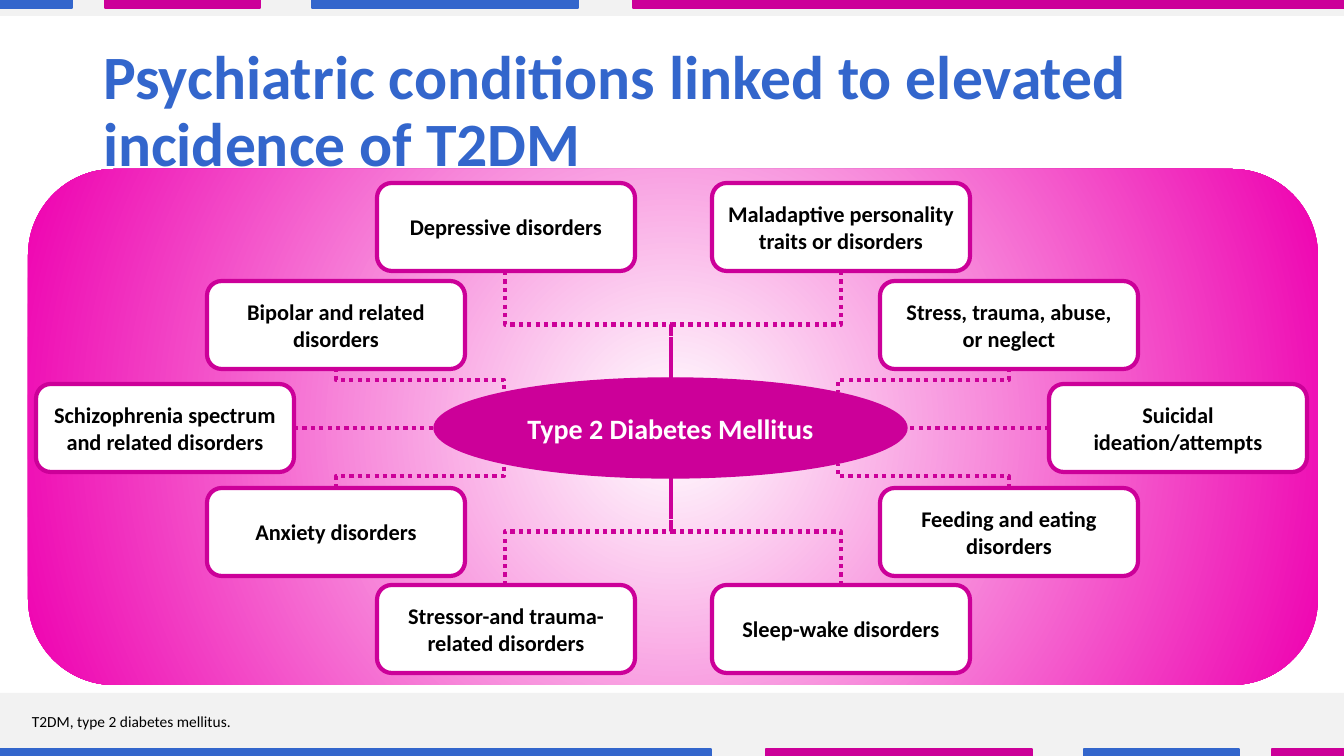
from lxml.etree import SubElement
from pptx import Presentation
from pptx.dml.color import RGBColor
from pptx.enum.dml import MSO_LINE_DASH_STYLE as DASH
from pptx.enum.shapes import MSO_CONNECTOR as CONNECTOR, MSO_SHAPE as SHAPE
from pptx.enum.text import MSO_ANCHOR as ANCHOR, MSO_AUTO_SIZE as AUTO_SIZE, PP_ALIGN as ALIGN
from pptx.oxml.ns import qn
from pptx.util import Pt

PX = 914400 / 100.8
COLORS = {name: RGBColor.from_string(value) for name, value in {
    "blue": "3366CC", "magenta": "CC0099", "pink": "EE00B0",
    "grey": "F2F2F2", "white": "FFFFFF", "black": "000000",
}.items()}


def draw(kind, bounds, fill, line=None, weight=1, text="", size=16, color="black"):
    shape = slide.shapes.add_shape(kind, *[round(v * PX) for v in bounds])
    shape.shadow.inherit = False
    shape.fill.solid()
    shape.fill.fore_color.rgb = COLORS[fill]
    if line:
        shape.line.color.rgb = COLORS[line]
        shape.line.width = Pt(weight)
    else:
        shape.line.fill.background()
    if text:
        shape.text_frame.vertical_anchor = ANCHOR.MIDDLE
        write(shape.text_frame, text, size, color, True, ALIGN.CENTER)
    return shape


def write(frame, text, size, color, bold, align):
    frame.word_wrap = True
    frame.text = text
    paragraph = frame.paragraphs[0]
    paragraph.alignment = align
    paragraph.font.name = "Calibri"
    paragraph.font.size = Pt(size)
    paragraph.font.bold = bold
    paragraph.font.color.rgb = COLORS[color]
    return paragraph


deck = Presentation()
deck.slide_width, deck.slide_height = round(1344 * PX), round(756 * PX)
slide = deck.slides.add_slide(deck.slide_layouts[5])

draw(SHAPE.RECTANGLE, (0, 693, 1344, 63), "grey")
draw(SHAPE.RECTANGLE, (0, 0, 1344, 16), "grey")
for left, width, color in [
    (0, 711, "blue"), (766, 266, "magenta"), (1084, 155, "blue"), (1272, 72, "magenta"),
]:
    opposite = "magenta" if color == "blue" else "blue"
    draw(SHAPE.RECTANGLE, (left, 749, width, 8), color, color)
    draw(SHAPE.RECTANGLE, (1344 - left - width, 0, width, 8), opposite, opposite)

title = slide.shapes.title
title.left, title.top, title.width, title.height = [round(v * PX) for v in (93, 40, 1159, 146)]
title.text_frame.auto_size = AUTO_SIZE.NONE
title.text_frame.vertical_anchor = ANCHOR.MIDDLE
heading = write(title.text_frame, "Psychiatric conditions linked to elevated incidence of T2DM",
                44, "blue", True, ALIGN.LEFT)
heading.line_spacing = 0.9

footnote = slide.shapes.add_textbox(*[round(v * PX) for v in (22, 701, 1297, 40)])
footnote.text_frame.vertical_anchor = ANCHOR.MIDDLE
write(footnote.text_frame, "T2DM, type 2 diabetes mellitus.", 11, "black", False, ALIGN.LEFT)

panel = draw(SHAPE.ROUNDED_RECTANGLE, (28, 169, 1290, 516), "white")
panel.fill.gradient()
for stop, color in zip(panel.fill.gradient_stops, ("white", "pink")):
    stop.color.rgb = COLORS[color]
gradient = panel.element.spPr.find(qn("a:gradFill"))
gradient.remove(gradient.find(qn("a:lin")))
circle = SubElement(gradient, qn("a:path"), path="circle")
SubElement(circle, qn("a:fillToRect"), l="50000", t="50000", r="50000", b="50000")

conditions = {}
for left, top, text in [
    (712, 183, "Maladaptive personality traits or disorders"),
    (377, 183, "Depressive disorders"),
    (712, 585, "Sleep-wake disorders"),
    (377, 585, "Stressor-and trauma-related disorders"),
    (1049, 384, "Suicidal ideation/attempts"),
    (36, 384, "Schizophrenia spectrum and related disorders"),
    (880, 488, "Feeding and eating disorders"),
    (207, 488, "Anxiety disorders"),
    (880, 281, "Stress, trauma, abuse, or neglect"),
    (207, 281, "Bipolar and related disorders"),
]:
    conditions[text] = draw(SHAPE.ROUNDED_RECTANGLE, (left, top, 258, 88),
                            "white", "magenta", 3, text)

draw(SHAPE.OVAL, (434, 378, 473, 100), "magenta", "magenta", 1,
     "Type 2 Diabetes Mellitus", 20, "white")

links = []
for x1, y1, x2, y2 in [
    (336, 368, 504, 392), (336, 488, 504, 464),
    (1009, 368, 838, 392), (1009, 488, 838, 464),
    (505, 271, 671, 378), (505, 585, 671, 478),
    (841, 271, 671, 378), (841, 585, 671, 478),
]:
    center_x, center_y = (x1 + x2) / 2, (y1 + y2) / 2
    half_x, half_y = (x2 - x1) / 2, (y2 - y1) / 2
    ends = (center_x - half_y, center_y + half_x, center_x + half_y, center_y - half_x)
    elbow = slide.shapes.add_connector(CONNECTOR.ELBOW, *[round(v * PX) for v in ends])
    elbow.element.spPr.find(qn("a:xfrm")).set("rot", "5400000")
    links.append(elbow)

for text, side, box_x, oval_x in [
    ("Schizophrenia spectrum and related disorders", 3, 294, 434),
    ("Suicidal ideation/attempts", 1, 1049, 907),
]:
    ends = (box_x, 428, oval_x, 428)
    straight = slide.shapes.add_connector(CONNECTOR.STRAIGHT, *[round(v * PX) for v in ends])
    straight.begin_connect(conditions[text], side)
    links.append(straight)

for link in links:
    link.line.color.rgb = COLORS["magenta"]
    link.line.width = Pt(3)
    link.line.dash_style = DASH.ROUND_DOT
    SubElement(link.element.spPr, qn("a:effectLst"))

deck.save("out.pptx")
